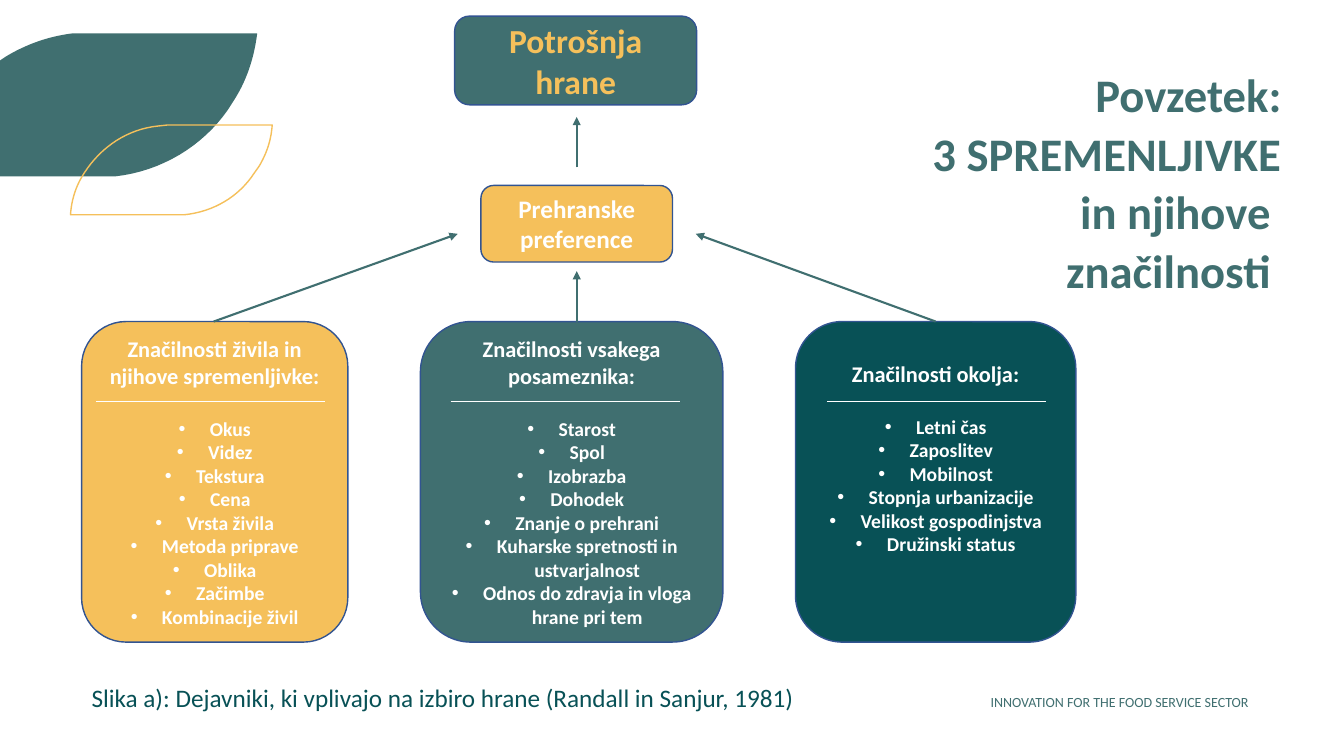
from lxml.etree import SubElement
from pptx import Presentation
from pptx.dml.color import RGBColor
from pptx.enum.shapes import MSO_CONNECTOR as Connector, MSO_SHAPE as Shape
from pptx.enum.text import MSO_ANCHOR as Anchor, MSO_AUTO_SIZE as AutoSize, PP_ALIGN as Align
from pptx.oxml.ns import qn
from pptx.util import Pt

PX = 9144
GREEN, DARK, GOLD, WHITE, OUTLINE = "406F70", "085156", "F5C05B", "FFFFFF", "325491"
BULLET_INDENT = 31

CARDS = [
    {"box": (81, 319, 264, 318), "fill": GOLD, "rule": (14, 227), "space_below": 5,
     "heading": "Značilnosti živila in njihove spremenljivke:",
     "items": ["Okus", "Videz", "Tekstura", "Cena", "Vrsta živila", "Metoda priprave",
               "Oblika", "Začimbe", "Kombinacije živil"]},
    {"box": (417, 319, 300, 318), "fill": GREEN, "rule": (30, 227), "space_below": 5,
     "heading": "Značilnosti vsakega posameznika:",
     "items": ["Starost", "Spol", "Izobrazba", "Dohodek", "Znanje o prehrani",
               "Kuharske spretnosti in ustvarjalnost",
               "Odnos do zdravja in vloga hrane pri tem"]},
    {"box": (789, 319, 278, 318), "fill": DARK, "rule": (31, 217), "space_below": 52,
     "heading": "Značilnosti okolja:",
     "items": ["Letni čas", "Zaposlitev", "Mobilnost", "Stopnja urbanizacije",
               "Velikost gospodinjstva", "Družinski status"]},
]
ARROWS = [(212, 319, 454, 232), (572, 319, 572, 269), (928, 319, 690, 232), (572, 166, 572, 116)]
LARGE_LEAF = [(0, 27), (0, 142), (114, 142), (160, 137, 201, 112, 226, 76), (233, 65),
              (245, 46, 252, 24, 255, 1), (255, 0), (73, 0),
              (48, 3, 26, 11, 6, 23), (0, 27)]
SMALL_LEAF = [(0, 89), (1, 73, 6, 59, 14, 47), (31, 21, 57, 4, 87, 1), (96, 0), (200, 0),
              (199, 16, 194, 29, 187, 41), (182, 48),
              (167, 71, 142, 86, 113, 89), (0, 89)]


def emu(*lengths):
    """Turn px lengths into EMU."""
    return [round(length * PX) for length in lengths]


def color(value):
    """Make a colour from a hex string."""
    return RGBColor.from_string(value)


def set_all(target, **values):
    """Set each given attribute on the target."""
    for name, value in values.items():
        setattr(target, name, value)


def paint(shape, fill=None, line=None):
    """Give a shape a flat fill and a thin outline, or none."""
    shape.shadow.inherit = False
    if fill:
        shape.fill.solid()
        shape.fill.fore_color.rgb = color(fill)
    else:
        shape.fill.background()
    if line:
        shape.line.color.rgb = color(line)
        shape.line.width = Pt(1)
    else:
        shape.line.fill.background()


def write(paragraph, text, size, ink, bold=False, **layout):
    """Write one formatted run and set the paragraph layout."""
    set_all(paragraph, **layout)
    run = paragraph.add_run()
    run.text = text
    set_all(run.font, name="Calibri", size=Pt(size), bold=bold)
    run.font.color.rgb = color(ink)


def add_bullet(paragraph):
    """Give a paragraph a round bullet with a hanging indent."""
    properties = paragraph._p.get_or_add_pPr()
    indent = emu(BULLET_INDENT)[0]
    properties.set("marL", str(indent))
    properties.set("indent", str(-indent))
    SubElement(properties, qn("a:buFont")).set("typeface", "Arial")
    SubElement(properties, qn("a:buChar")).set("char", "•")


def add_line(slide, ends, ink, width, arrow=False):
    """Draw a straight line, with an arrowhead at its end if asked."""
    line = slide.shapes.add_connector(Connector.STRAIGHT, *emu(*ends))
    line.line.color.rgb = color(ink)
    line.line.width = Pt(width)
    if arrow:
        SubElement(line.line._get_or_add_ln(), qn("a:tailEnd")).set("type", "triangle")
    SubElement(line._element.spPr, qn("a:effectLst"))


def add_leaf(slide, left, top, outline, **colors):
    """Draw a leaf from corner points and sampled cubic curves."""
    points = [outline[0]]
    for step in outline[1:]:
        if len(step) == 2:
            points.append(step)
            continue
        start = points[-1]
        for t in (i / 16 for i in range(1, 17)):
            weights = ((1 - t) ** 3, 3 * t * (1 - t) ** 2, 3 * t * t * (1 - t), t ** 3)
            points.append(tuple(sum(w * v for w, v in zip(weights, (start[axis], *step[axis::2])))
                                for axis in (0, 1)))
    corners = [emu(left + x, top + y) for x, y in points]
    builder = slide.shapes.build_freeform(*corners[0], scale=1.0)
    builder.add_line_segments(corners[1:], close=True)
    paint(builder.convert_to_shape(), **colors)


def add_title(slide, box, lines):
    """Place the right-aligned title and write its lines."""
    title = slide.shapes.title
    set_all(title, **dict(zip(("left", "top", "width", "height"), emu(*box))))
    frame = title.text_frame
    set_all(frame, word_wrap=True, auto_size=AutoSize.NONE, vertical_anchor=Anchor.TOP)
    for number, line in enumerate(lines):
        paragraph = frame.add_paragraph() if number else frame.paragraphs[0]
        write(paragraph, line, 33.3, GREEN, True, alignment=Align.RIGHT, line_spacing=0.8,
              space_before=Pt(10 if number else 0))


def add_label(slide, box, text, size, ink, alignment):
    """Place a single line of plain text."""
    frame = slide.shapes.add_textbox(*emu(*box)).text_frame
    frame.word_wrap = True
    write(frame.paragraphs[0], text, size, ink, alignment=alignment)


def add_node(slide, box, fill, text, size, ink):
    """Draw a rounded box with a centred bold heading and return its text frame."""
    shape = slide.shapes.add_shape(Shape.ROUNDED_RECTANGLE, *emu(*box))
    paint(shape, fill, OUTLINE)
    frame = shape.text_frame
    set_all(frame, word_wrap=True, vertical_anchor=Anchor.MIDDLE)
    write(frame.paragraphs[0], text, size, ink, True, alignment=Align.CENTER)
    return frame


def add_card(slide, box, fill, heading, items, rule, space_below):
    """Draw a card with a heading, a rule under it and a bulleted list."""
    frame = add_node(slide, box, fill, heading, 16, WHITE)
    frame.margin_bottom = emu(space_below)[0]
    for number, item in enumerate(items):
        paragraph = frame.add_paragraph()
        add_bullet(paragraph)
        write(paragraph, item, 14, WHITE, True, alignment=Align.CENTER,
              space_before=Pt(0 if number else 19.5))
    left, top = box[0] + rule[0], box[1] + 79
    add_line(slide, (left, top, left + rule[1], top), WHITE, 0.5)


def main():
    """Build the slide and save it."""
    presentation = Presentation()
    set_all(presentation, **dict(zip(("slide_width", "slide_height"), emu(1333, 750))))
    slide = presentation.slides.add_slide(presentation.slide_layouts[5])
    add_leaf(slide, 0, 33, LARGE_LEAF, fill=GREEN)
    add_leaf(slide, 70, 124, SMALL_LEAF, line=GOLD)
    add_label(slide, (947, 683, 301, 27), "INNOVATION FOR THE FOOD SERVICE SECTOR",
              10, GREEN, Align.RIGHT)
    add_title(slide, (303, 71, 978, 248),
              ["Povzetek:", "3 SPREMENLJIVKE", "in njihove ", "značilnosti "])
    for card in CARDS:
        add_card(slide, **card)
    add_node(slide, (477, 184, 190, 76), GOLD, "Prehranske preference", 18, WHITE)
    add_node(slide, (451, 16, 240, 88), GREEN, "Potrošnja hrane", 24, GOLD)
    add_label(slide, (81, 672, 827, 40),
              "Slika a): Dejavniki, ki vplivajo na izbiro hrane (Randall in Sanjur, 1981)",
              18, DARK, Align.LEFT)
    for ends in ARROWS:
        add_line(slide, ends, GREEN, 1.5, arrow=True)
    presentation.save("out.pptx")


if __name__ == "__main__":
    main()
